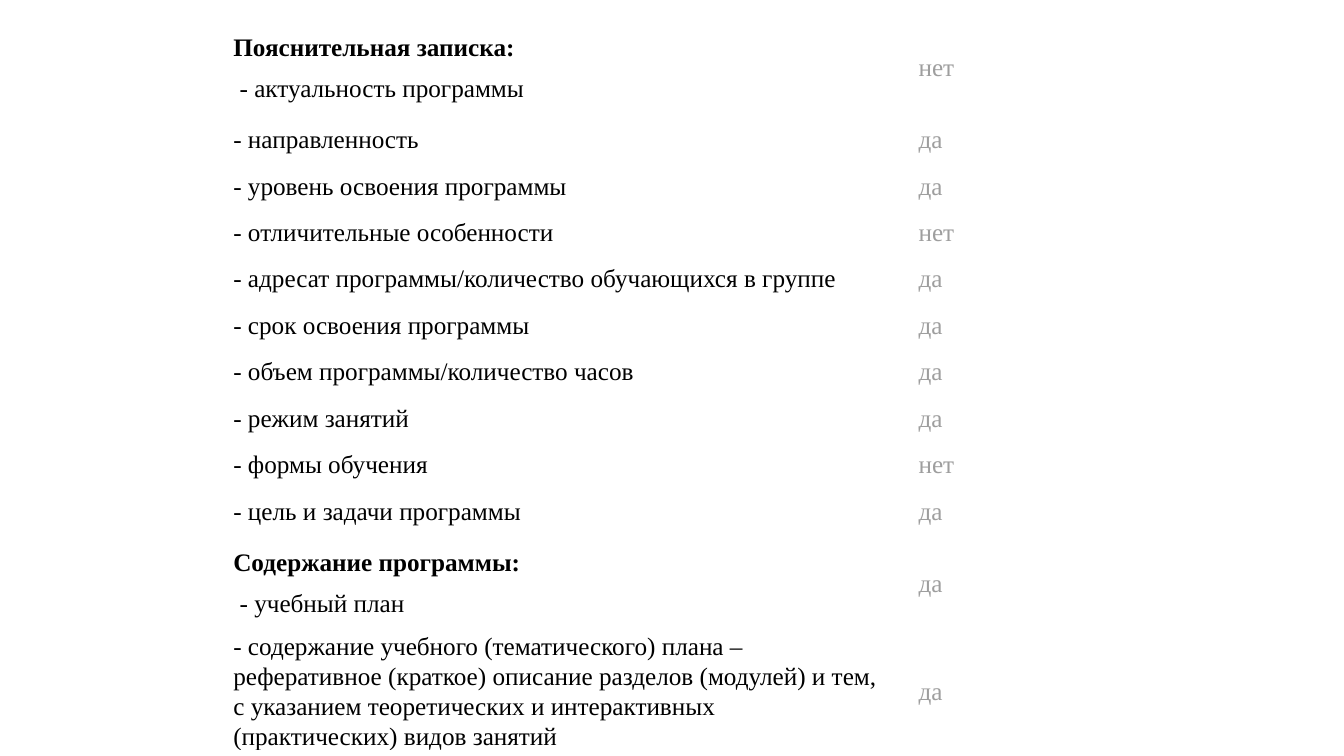
import pptx
import pptx.util
import pptx.dml.color
import pptx.enum.text

Cm = pptx.util.Cm
Pt = pptx.util.Pt
BLACK = pptx.dml.color.RGBColor(0x00, 0x00, 0x00)
GREY = pptx.dml.color.RGBColor(0x9E, 0x9E, 0x9E)

SECTION_HEIGHT = 2.46
ITEM_HEIGHT = 1.17
LAST_HEIGHT = 1.73

sections = ["Пояснительная записка:", "Содержание программы:"]
rows = [
    ([sections[0], " - актуальность программы"], "нет"),
    (["- направленность"], "да"),
    (["- уровень освоения программы"], "да"),
    (["- отличительные особенности"], "нет"),
    (["- адресат программы/количество обучающихся в группе"], "да"),
    (["- срок освоения программы"], "да"),
    (["- объем программы/количество часов"], "да"),
    (["- режим занятий"], "да"),
    (["- формы обучения"], "нет"),
    (["- цель и задачи программы"], "да"),
    ([sections[1], " - учебный план"], "да"),
    (["- содержание учебного (тематического) плана – реферативное (краткое) "
      "описание разделов (модулей) и тем, с указанием теоретических и "
      "интерактивных (практических) видов занятий"], "да"),
]
heights = [SECTION_HEIGHT if len(lines) > 1 else ITEM_HEIGHT for lines, mark in rows]
heights[-1] = LAST_HEIGHT

prs = pptx.Presentation()
prs.slide_width = Cm(33.87)
prs.slide_height = Cm(19.05)
s = prs.slides.add_slide(prs.slide_layouts[6])

table = s.shapes.add_table(
    len(rows), 2, Cm(5.44), Cm(0.46), Cm(19.28), Cm(sum(heights))
).table
table.first_row = False
table.horz_banding = False
table.columns[0].width = Cm(17.27)
table.columns[1].width = Cm(2.01)

for i, (lines, mark) in enumerate(rows):
    table.rows[i].height = Cm(heights[i])
    for j, (texts, color) in enumerate([(lines, BLACK), ([mark], GREY)]):
        cell = table.cell(i, j)
        cell.fill.background()
        cell.vertical_anchor = pptx.enum.text.MSO_ANCHOR.MIDDLE
        cell.margin_left = cell.margin_right = Cm(0.44)
        cell.margin_top = cell.margin_bottom = 0
        tf = cell.text_frame
        tf.text = "\n".join(texts)
        for p in tf.paragraphs:
            p.line_spacing = 1.07
            p.space_after = Pt(8)
            p.font.name = "Times New Roman"
            p.font.size = Pt(18)
            p.font.bold = p.text in sections
            p.font.color.rgb = color

prs.save("out.pptx")
